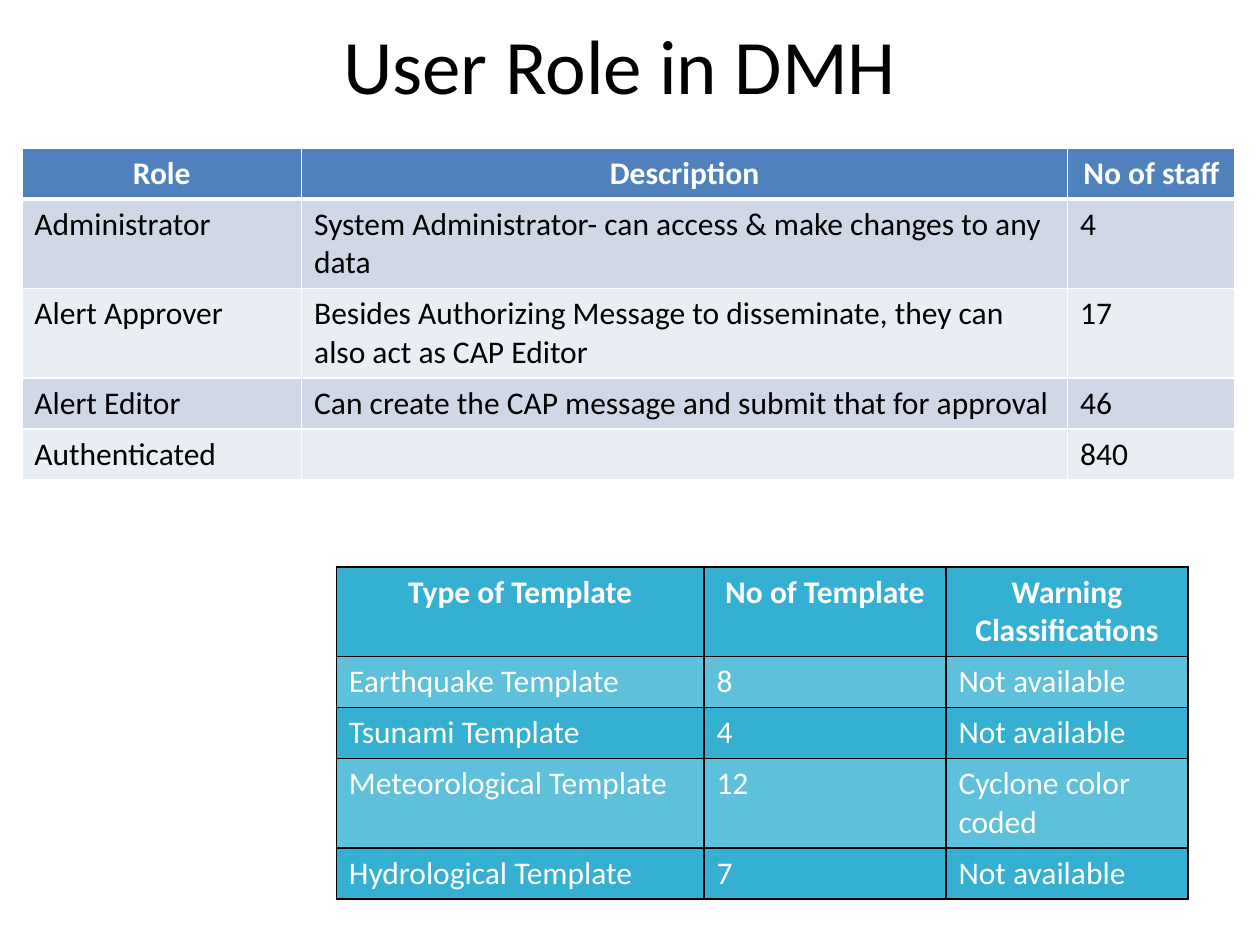
from dataclasses import dataclass

from lxml import etree
from pptx import Presentation
from pptx import util as u
from pptx.dml.color import RGBColor
from pptx.enum import text
from pptx.oxml import ns

FONT = "Calibri"
LINE_HEIGHT = 1.03
WRAPPED_HEIGHT = 1.8
COLOURS = {
    "black": "000000",
    "white": "FFFFFF",
    "blue": "4F81BD",
    "blue_band": "D0D8E8",
    "blue_pale": "E9EDF4",
    "teal": "36B0D2",
    "teal_band": "5EC0DB",
}


@dataclass(frozen=True)
class Grid:
    left: float
    top: float
    widths: tuple[float, ...]
    rows: tuple[tuple[str, ...], ...]
    wrapped_rows: tuple[int, ...]
    header_fill: str
    band_fills: tuple[str, str]
    body_colour: str
    border: str
    header_rule: float


ROLES = Grid(
    left=0.44,
    top=2.98,
    widths=(5.64, 15.44, 3.38),
    rows=(
        ("Role", "Description", "No of staff"),
        ("Administrator", "System Administrator- can access & make changes to any data", "4"),
        ("Alert Approver",
         "Besides Authorizing Message to disseminate, they can also act as CAP Editor", "17"),
        ("Alert Editor", "Can create the CAP message and submit that for approval", "46"),
        ("Authenticated", "", "840"),
    ),
    wrapped_rows=(1, 2),
    header_fill="blue",
    band_fills=("blue_band", "blue_pale"),
    body_colour="black",
    border="white",
    header_rule=3,
)

TEMPLATES = Grid(
    left=6.78,
    top=11.43,
    widths=(7.41, 4.88, 4.88),
    rows=(
        ("Type of Template", "No of Template", "Warning Classifications"),
        ("Earthquake Template", "8", "Not available"),
        ("Tsunami Template", "4", "Not available"),
        ("Meteorological Template", "12", "Cyclone color coded"),
        ("Hydrological Template", "7", "Not available"),
    ),
    wrapped_rows=(0, 3),
    header_fill="teal",
    band_fills=("teal_band", "teal"),
    body_colour="white",
    border="black",
    header_rule=1,
)


def rgb(name: str) -> RGBColor:
    return RGBColor.from_string(COLOURS[name])


def write(frame, words: str, *, size: float = 18, colour: str = "black",
          bold: bool = False, centred: bool = False) -> None:
    para = frame.paragraphs[0]
    para.alignment = text.PP_ALIGN.CENTER if centred else text.PP_ALIGN.LEFT
    if not words:
        return
    span = para.add_run()
    span.text = words
    span.font.name = FONT
    span.font.size = u.Pt(size)
    span.font.bold = bold
    span.font.color.rgb = rgb(colour)


def set_borders(cell, colour: str, top: float, bottom: float) -> None:
    properties = cell._tc.get_or_add_tcPr()
    for side, points in (("L", 1), ("R", 1), ("T", top), ("B", bottom)):
        line = etree.SubElement(properties, ns.qn(f"a:ln{side}"), w=str(u.Pt(points)))
        fill = etree.SubElement(line, ns.qn("a:solidFill"))
        etree.SubElement(fill, ns.qn("a:srgbClr"), val=COLOURS[colour])


def draw_grid(page, grid: Grid) -> None:
    heights = [WRAPPED_HEIGHT if index in grid.wrapped_rows else LINE_HEIGHT
               for index in range(len(grid.rows))]
    table = page.shapes.add_table(
        len(grid.rows), len(grid.widths), u.Cm(grid.left), u.Cm(grid.top),
        u.Cm(sum(grid.widths)), u.Cm(sum(heights))).table
    table.horz_banding = False
    for column, width in zip(table.columns, grid.widths):
        column.width = u.Cm(width)
    for index, (row, height, values) in enumerate(zip(table.rows, heights, grid.rows)):
        row.height = u.Cm(height)
        header = index == 0
        fill = grid.header_fill if header else grid.band_fills[(index - 1) % 2]
        for cell, words in zip(row.cells, values):
            set_borders(cell, grid.border,
                        top=grid.header_rule if index == 1 else 1,
                        bottom=grid.header_rule if header else 1)
            cell.fill.solid()
            cell.fill.fore_color.rgb = rgb(fill)
            write(cell.text_frame, words, bold=header, centred=header,
                  colour="white" if header else grid.body_colour)


def draw_title(page, words: str) -> None:
    box = page.shapes.add_textbox(u.Cm(1.07), u.Cm(0.08), u.Cm(22.86), u.Cm(2.39))
    box.text_frame.word_wrap = True
    box.text_frame.vertical_anchor = text.MSO_ANCHOR.MIDDLE
    write(box.text_frame, words, size=44, centred=True)


def main() -> None:
    deck = Presentation()
    deck.slide_width, deck.slide_height = u.Cm(25.4), u.Cm(19.05)
    page = deck.slides.add_slide(deck.slide_layouts[6])
    draw_grid(page, ROLES)
    draw_title(page, "User Role in DMH")
    draw_grid(page, TEMPLATES)
    deck.save("out.pptx")


if __name__ == "__main__":
    main()
